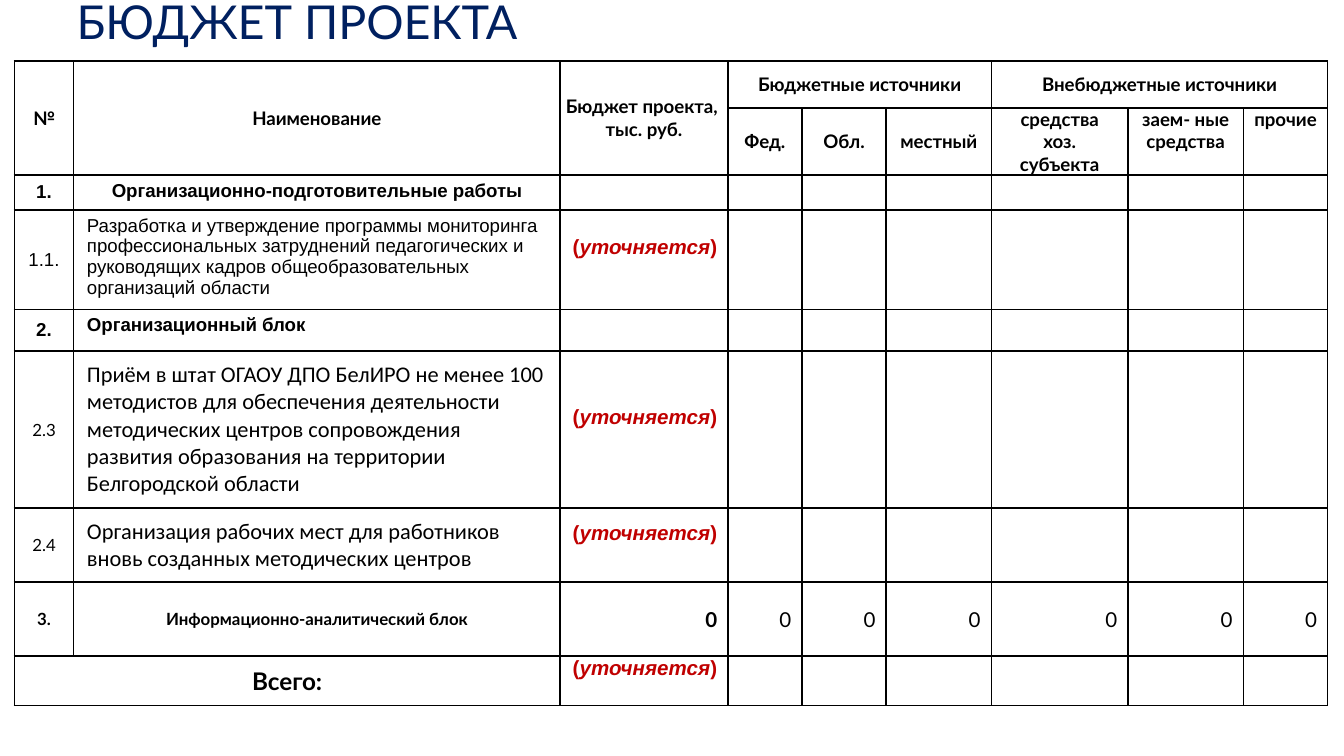
from dataclasses import dataclass, replace

from lxml.etree import SubElement
from pptx import Presentation
from pptx.dml.color import RGBColor
from pptx.enum.text import MSO_ANCHOR, PP_ALIGN
from pptx.oxml.ns import qn
from pptx.table import Table, _Cell
from pptx.text.text import Font
from pptx.util import Pt

COLORS = {"title": "002060", "text": "000000", "pending": "C00000",
          "border": "000000", "cell": "FFFFFF"}
COLUMN_WIDTHS = [31.7, 260.6, 90, 39.6, 45.2, 56.3, 73.2, 61.8, 45.2]
ROW_HEIGHTS = [25.2, 36, 18.7, 53.3, 22.3, 84.2, 39.6, 39.6, 26.6]
BORDER_WIDTH = 1


@dataclass(frozen=True)
class Look:
    font: str = "Lato"
    size: float = 10
    bold: bool = False
    color: str = "text"
    align: PP_ALIGN = PP_ALIGN.CENTER
    anchor: MSO_ANCHOR = MSO_ANCHOR.MIDDLE
    margins: tuple[float, float, float, float] = (7.2, 2.88, 7.2, 2.88)


@dataclass(frozen=True)
class Entry:
    row: int
    column: int
    text: str
    look: Look
    row_span: int = 1
    column_span: int = 1


HEADER = Look(bold=True, margins=(2.88, 2.88, 2.88, 2.88))
SUBHEADER = Look(bold=True, anchor=MSO_ANCHOR.TOP, margins=(5.76, 0, 5.76, 0))
NUMBER = Look("Arial")
SECTION_NUMBER = replace(NUMBER, bold=True)
SECTION = replace(SECTION_NUMBER, anchor=MSO_ANCHOR.TOP)
TASK = Look("Arial", align=PP_ALIGN.LEFT, anchor=MSO_ANCHOR.TOP)
LARGE_TASK = Look("Calibri", 12, align=PP_ALIGN.LEFT)
SMALL = Look(size=9)
SMALL_BOLD = replace(SMALL, bold=True)
AMOUNT = Look(size=11, align=PP_ALIGN.RIGHT, margins=(2.88, 0, 5.76, 0))
PENDING = Look("Arial", 11, True, "pending", PP_ALIGN.RIGHT,
               margins=(2.88, 0, 5.76, 13))
EMPTY = Look(size=9, margins=(0, 0, 0, 0))

ENTRIES = [
    Entry(0, 0, "№", HEADER, row_span=2),
    Entry(0, 1, "Наименование", HEADER, row_span=2),
    Entry(0, 2, "Бюджет проекта, \nтыс. руб.", HEADER, row_span=2),
    Entry(0, 3, "Бюджетные источники", HEADER, column_span=3),
    Entry(0, 6, "Внебюджетные источники", HEADER, column_span=3),
    Entry(1, 3, "Фед.", HEADER),
    Entry(1, 4, "Обл.", HEADER),
    Entry(1, 5, "местный", HEADER),
    Entry(1, 6, "средства хоз. субъекта", SUBHEADER),
    Entry(1, 7, "заем- ные средства", SUBHEADER),
    Entry(1, 8, "прочие", SUBHEADER),
    Entry(2, 0, "1.", SECTION_NUMBER),
    Entry(2, 1, "Организационно-подготовительные работы", SECTION),
    Entry(3, 0, "1.1.", NUMBER),
    Entry(3, 1, "Разработка и утверждение программы мониторинга "
          "профессиональных затруднений педагогических и руководящих кадров "
          "общеобразовательных организаций области", TASK),
    Entry(4, 0, "2.", SECTION_NUMBER),
    Entry(4, 1, "Организационный блок", replace(TASK, bold=True)),
    Entry(5, 0, "2.3", SMALL),
    Entry(5, 1, "Приём в штат ОГАОУ ДПО БелИРО не менее 100 методистов для "
          "обеспечения деятельности методических центров сопровождения "
          "развития образования на территории Белгородской области", LARGE_TASK),
    Entry(6, 0, "2.4", SMALL),
    Entry(6, 1, "Организация рабочих мест для работников вновь созданных "
          "методических центров", LARGE_TASK),
    Entry(7, 0, "3.", SMALL_BOLD),
    Entry(7, 1, "Информационно-аналитический блок", SMALL_BOLD),
    Entry(7, 2, "0", replace(AMOUNT, bold=True)),
    *[Entry(7, column, "0", AMOUNT) for column in range(3, 9)],
    Entry(8, 0, "Всего:", Look(size=13, bold=True), column_span=2),
    *[Entry(row, 2, "(уточняется)", PENDING) for row in (3, 5, 6, 8)],
]


def color(name: str) -> RGBColor:
    return RGBColor.from_string(COLORS[name])


def set_font(font: Font, look: Look) -> None:
    font.name, font.size, font.bold = look.font, Pt(look.size), look.bold
    font.color.rgb = color(look.color)


def add_borders(cell: _Cell) -> None:
    properties = cell._tc.get_or_add_tcPr()
    for index, side in enumerate(("lnL", "lnR", "lnT", "lnB")):
        line = properties.makeelement(qn(f"a:{side}"), {"w": str(Pt(BORDER_WIDTH))})
        properties.insert(index, line)
        fill = SubElement(line, qn("a:solidFill"))
        SubElement(fill, qn("a:srgbClr"), val=COLORS["border"])


def style_cell(cell: _Cell, look: Look) -> None:
    cell.margin_left, cell.margin_top, cell.margin_right, cell.margin_bottom = map(
        Pt, look.margins)
    cell.vertical_anchor = look.anchor
    paragraph = cell.text_frame.paragraphs[0]
    paragraph.alignment = look.align
    set_font(paragraph.font, look)


def fill_entry(table: Table, entry: Entry) -> None:
    cell = table.cell(entry.row, entry.column)
    if entry.row_span > 1 or entry.column_span > 1:
        cell.merge(table.cell(entry.row + entry.row_span - 1,
                              entry.column + entry.column_span - 1))
    style_cell(cell, entry.look)
    paragraph = cell.text_frame.paragraphs[0]
    if entry.look is PENDING:
        for text in ("(", entry.text.strip("()"), ")"):
            span = paragraph.add_run()
            span.text = text
            span.font.italic = text not in "()"
    else:
        paragraph.text = entry.text


def main() -> None:
    deck = Presentation()
    deck.slide_width, deck.slide_height = Pt(720), Pt(405)
    page = deck.slides.add_slide(deck.slide_layouts[5])

    title = page.shapes.title
    title.left, title.top, title.width, title.height = map(Pt, (33.8, 0, 614.2, 22.3))
    title.text_frame.text = "БЮДЖЕТ ПРОЕКТА"
    title.text_frame.vertical_anchor = MSO_ANCHOR.MIDDLE
    heading = title.text_frame.paragraphs[0]
    heading.alignment = PP_ALIGN.LEFT
    set_font(heading.font, Look(size=25, color="title"))

    table = page.shapes.add_table(
        len(ROW_HEIGHTS), len(COLUMN_WIDTHS), Pt(7.7), Pt(32.6),
        Pt(sum(COLUMN_WIDTHS)), Pt(sum(ROW_HEIGHTS))).table
    table.first_row = table.horz_banding = False
    for column, width in zip(table.columns, COLUMN_WIDTHS):
        column.width = Pt(width)
    for row, height in zip(table.rows, ROW_HEIGHTS):
        row.height = Pt(height)
    for cell in table.iter_cells():
        cell.fill.solid()
        cell.fill.fore_color.rgb = color("cell")
        add_borders(cell)
        style_cell(cell, EMPTY)
    for entry in ENTRIES:
        fill_entry(table, entry)

    deck.save("out.pptx")


if __name__ == "__main__":
    main()
